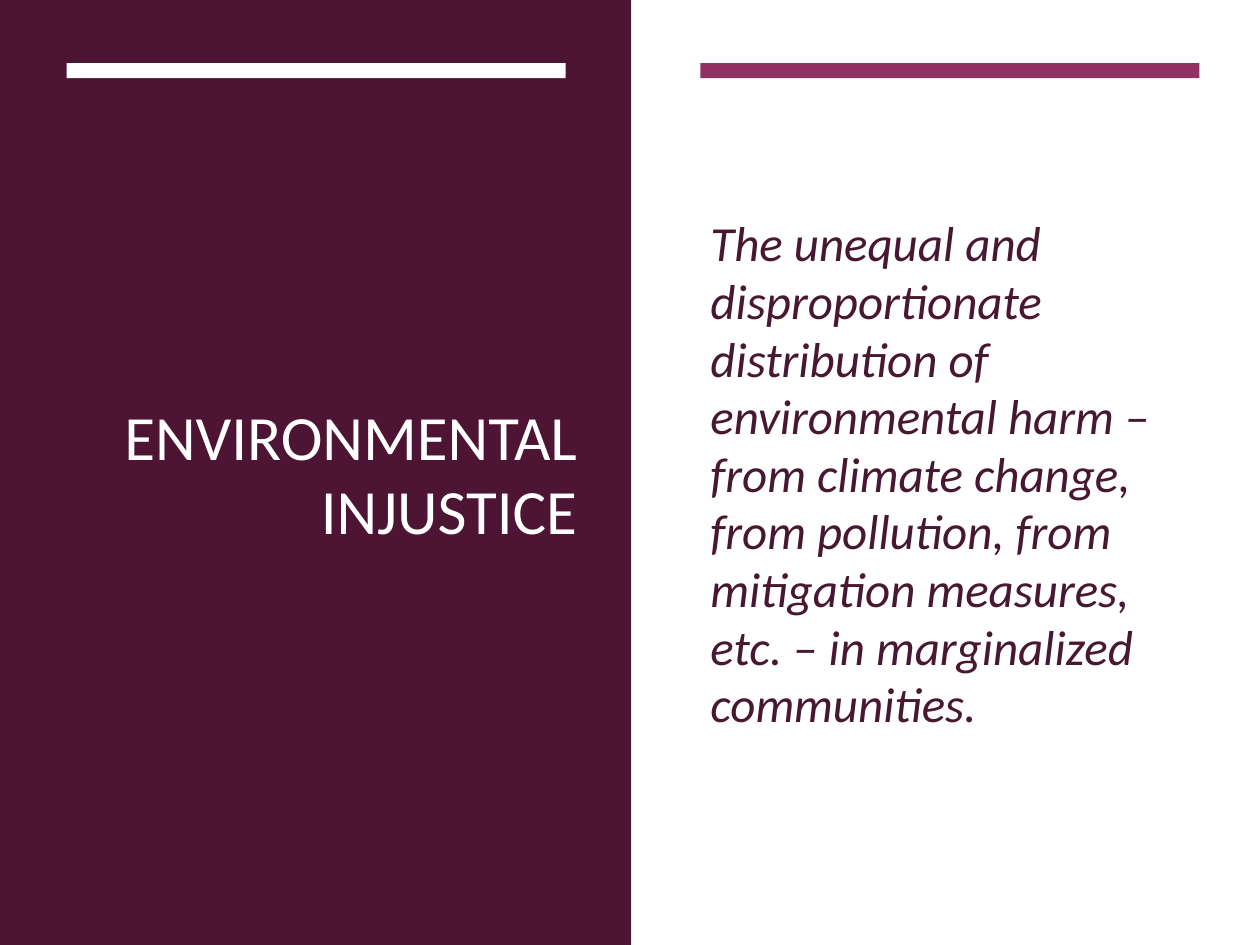
from pptx import Presentation
from pptx.dml.color import RGBColor
from pptx.enum.shapes import MSO_SHAPE
from pptx.enum.text import MSO_ANCHOR, PP_ALIGN
from pptx.util import Inches, Pt

RECTANGLE = MSO_SHAPE.RECTANGLE
MIDDLE = MSO_ANCHOR.MIDDLE
LEFT, RIGHT = PP_ALIGN.LEFT, PP_ALIGN.RIGHT

TITLE = "ENVIRONMENTAL INJUSTICE"
DEFINITION = (
    "The unequal and disproportionate distribution of environmental harm – "
    "from climate change, from pollution, from mitigation measures, etc. – "
    "in marginalized communities."
)

THEME = {
    "font": "Calibri",
    "white": "FFFFFF",
    "panel": "4D1434",
    "accent": "903163",
    "body": "481831",
    "title_size": 36,
    "body_size": 28,
    "line_spacing": 0.98,
}

SLIDE_WIDTH, SLIDE_HEIGHT = 10, 7.5
PANEL_WIDTH = 5.01
BAR_TOP, BAR_WIDTH, BAR_HEIGHT = 0.5, 3.96, 0.12
TEXT_TOP, TEXT_HEIGHT = 1.13, 5.28

RECTANGLES = [
    (0, 0, SLIDE_WIDTH, SLIDE_HEIGHT, "white"),
    (0, 0, PANEL_WIDTH, SLIDE_HEIGHT, "panel"),
    (0.53, BAR_TOP, BAR_WIDTH, BAR_HEIGHT, "white"),
    (5.56, BAR_TOP, BAR_WIDTH, BAR_HEIGHT, "accent"),
]
TEXTS = [
    (TITLE, 0.18, 4.5, RIGHT, "title_size", "white", False),
    (DEFINITION, 5.54, 3.98, LEFT, "body_size", "body", True),
]


def theme_color(name):
    return RGBColor.from_string(THEME[name])


def add_rectangle(slide, left, top, width, height, color):
    shape = slide.shapes.add_shape(
        RECTANGLE, Inches(left), Inches(top), Inches(width), Inches(height)
    )
    shape.shadow.inherit = False
    shape.fill.solid()
    shape.fill.fore_color.rgb = theme_color(color)
    shape.line.fill.background()


def add_text(slide, text, left, width, alignment, size, color, italic):
    box = slide.shapes.add_textbox(
        Inches(left), Inches(TEXT_TOP), Inches(width), Inches(TEXT_HEIGHT)
    )
    text_frame = box.text_frame
    text_frame.word_wrap = True
    text_frame.vertical_anchor = MIDDLE
    text_frame.text = text
    paragraph = text_frame.paragraphs[0]
    paragraph.alignment = alignment
    paragraph.line_spacing = THEME["line_spacing"]
    font = paragraph.runs[0].font
    font.name = THEME["font"]
    font.size = Pt(THEME[size])
    font.italic = italic
    font.color.rgb = theme_color(color)


def main():
    presentation = Presentation()
    presentation.slide_width = Inches(SLIDE_WIDTH)
    presentation.slide_height = Inches(SLIDE_HEIGHT)
    slide = presentation.slides.add_slide(presentation.slide_layouts[6])
    for rectangle in RECTANGLES:
        add_rectangle(slide, *rectangle)
    for text in TEXTS:
        add_text(slide, *text)
    presentation.save("out.pptx")


if __name__ == "__main__":
    main()
